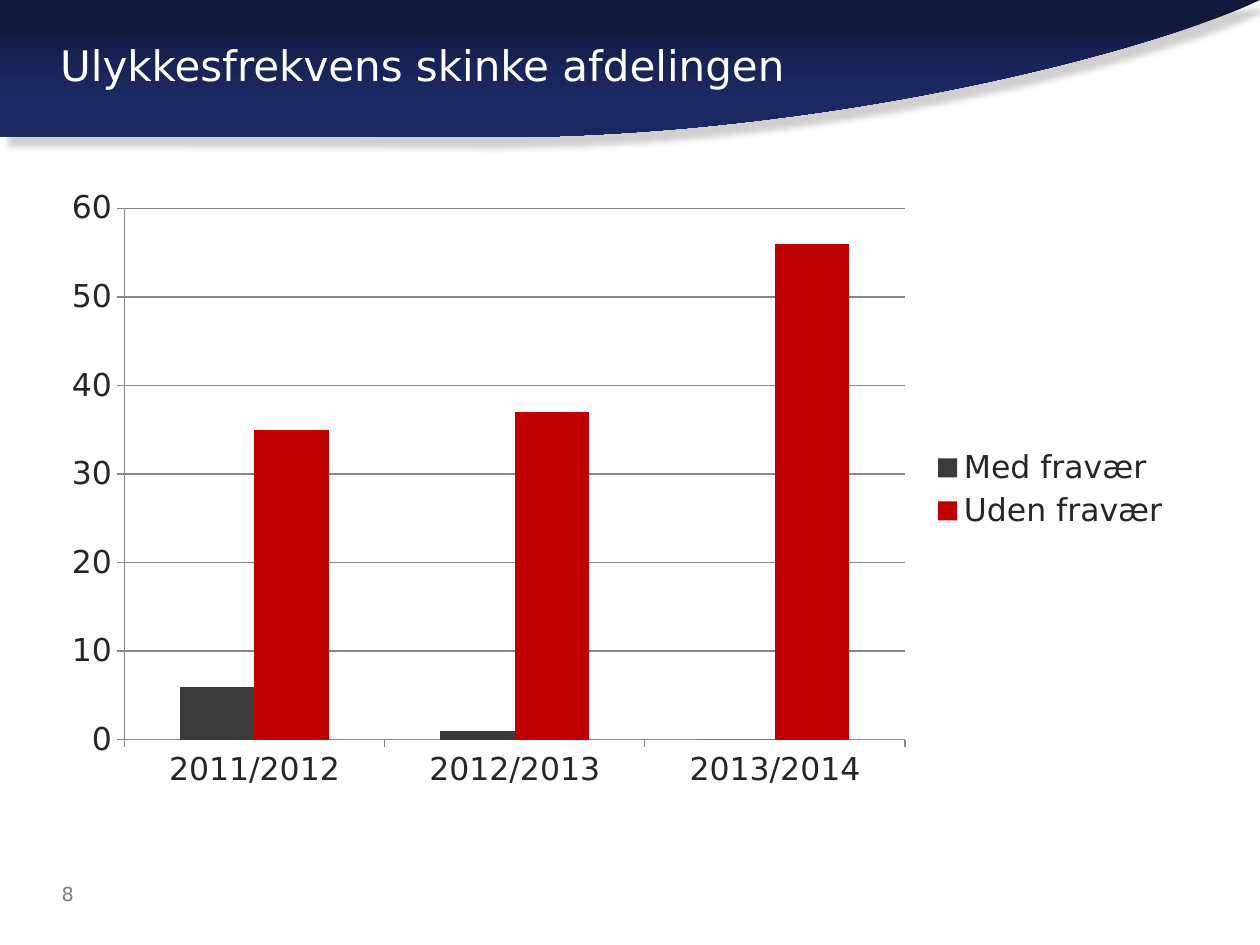
from lxml import etree
from pptx import Presentation
from pptx.chart.data import CategoryChartData
from pptx.dml.color import RGBColor
from pptx.enum.chart import XL_CHART_TYPE, XL_LEGEND_POSITION, XL_TICK_MARK
from pptx.enum.text import MSO_ANCHOR
from pptx.oxml import parse_xml
from pptx.oxml.ns import nsdecls
from pptx.util import Inches, Pt

COLUMNS = XL_CHART_TYPE.COLUMN_CLUSTERED
RIGHT = XL_LEGEND_POSITION.RIGHT
OUT = XL_TICK_MARK.OUTSIDE
TOP, MIDDLE = MSO_ANCHOR.TOP, MSO_ANCHOR.MIDDLE
FONT = "DejaVu Sans"
COLORS = {
    "night": "11193B", "navy": "19255A", "blue": "1B2963",
    "white": "FFFFFF", "ink": "262626", "gray": "808080",
    "line": "868686", "dark": "3B3B3B", "red": "C00000", "black": "000000",
}
STOPS = [(15, "night"), (50, "navy"), (74, "blue")]
YEARS = ["2011/2012", "2012/2013", "2013/2014"]
SERIES = [("Med fravær", (6, 1, 0), "dark"), ("Uden fravær", (35, 37, 56), "red")]


def color(name):
    return RGBColor.from_string(COLORS[name])


def style(font, size, name):
    font.name, font.size = FONT, Pt(size)
    font.color.rgb = color(name)


def curve(points, steps=60):
    """Points along a cubic curve."""
    for i in range(1, steps + 1):
        t = i / steps
        parts = ((1 - t) ** 3, 3 * t * (1 - t) ** 2, 3 * t * t * (1 - t), t ** 3)
        yield tuple(sum(w * p[k] for w, p in zip(parts, points)) for k in (0, 1))


def add_band(slide, left, top, width, height):
    # Outline, as shares of the box
    bend = [(0.373, 0.982), (0.669, 1), (0.933, 0.297), (1, 0)]
    outline = [(0, 0.973), bend[0], *curve(bend), (0, 0)]
    build = slide.shapes.build_freeform(left, top)
    build.add_line_segments(
        [(left + int(x * width), top + int(y * height)) for x, y in outline])
    band = build.convert_to_shape()
    band.line.fill.background()

    # Gradient with three stops
    stops = "".join(
        f'<a:gs pos="{pos * 1000}"><a:srgbClr val="{COLORS[name]}"/></a:gs>'
        for pos, name in STOPS)
    fill = parse_xml(
        f'<a:gradFill {nsdecls("a")} rotWithShape="1"><a:gsLst>{stops}</a:gsLst>'
        '<a:lin ang="5400000" scaled="0"/></a:gradFill>')
    props = band.fill._xPr
    props.find(".//{*}ln").addprevious(fill)

    # Soft shadow below
    band.shadow.inherit = False
    effects = props.find("{*}effectLst")
    effects.append(parse_xml(
        f'<a:outerShdw {nsdecls("a")} blurRad="{Pt(3.5)}" dist="{Pt(7)}"'
        f' dir="{49 * 60000}" algn="tl" rotWithShape="0">'
        f'<a:srgbClr val="{COLORS["black"]}"><a:alpha val="18000"/></a:srgbClr>'
        '</a:outerShdw>'))


def add_text(slide, text, size, name, anchor, left, top, width, height):
    frame = slide.shapes.add_textbox(left, top, width, height).text_frame
    frame.word_wrap = True
    frame.vertical_anchor = anchor
    run = frame.paragraphs[0].add_run()
    run.text = text
    style(run.font, size, name)


def add_bars(slide, left, top, width, height):
    data = CategoryChartData()
    data.categories = YEARS
    for name, values, _ in SERIES:
        data.add_series(name, values)
    chart = slide.shapes.add_chart(COLUMNS, left, top, width, height, data).chart
    style(chart.font, 18, "ink")
    chart.has_title = False

    # Legend
    chart.has_legend = True
    chart.legend.position = RIGHT
    chart.legend.include_in_layout = False

    # Axes and grid
    chart.value_axis.has_major_gridlines = True
    for axis in (chart.category_axis, chart.value_axis):
        axis.major_tick_mark = OUT
    for part in (chart.category_axis, chart.value_axis,
                 chart.value_axis.major_gridlines):
        part.format.line.color.rgb = color("line")
        part.format.line.width = Pt(0.75)

    # Bars
    plot = chart.plots[0]
    plot.gap_width, plot.overlap = 150, 0
    plot.vary_by_categories = False
    for bars, (_, _, name) in zip(plot.series, SERIES):
        bars.format.fill.solid()
        bars.format.fill.fore_color.rgb = color(name)


def main():
    deck = Presentation()
    deck.slide_width, deck.slide_height = Inches(10), Inches(7.5)
    slide = deck.slides.add_slide(deck.slide_layouts[6])
    add_band(slide, 0, 0, Inches(10), Inches(1.11))
    add_text(slide, "Ulykkesfrekvens skinke afdelingen", 24, "white", MIDDLE,
             Inches(0.38), 0, Inches(9), Inches(1.02))
    add_bars(slide, Inches(0.39), Inches(1.41), Inches(9), Inches(4.95))
    add_text(slide, "8", 11, "gray", TOP,
             Inches(0.39), Inches(6.95), Inches(0.7), Inches(0.4))
    deck.save("out.pptx")


if __name__ == "__main__":
    main()
